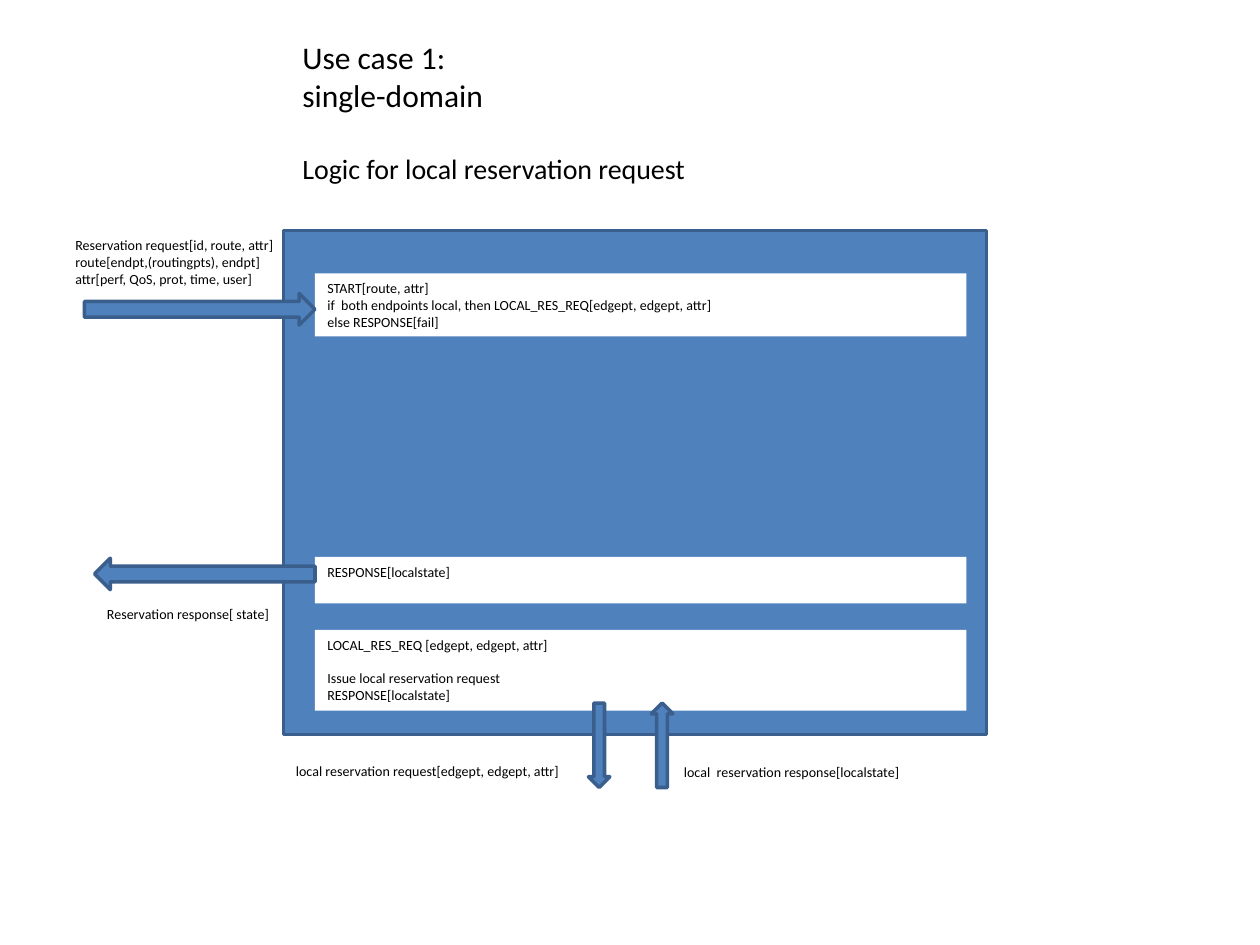
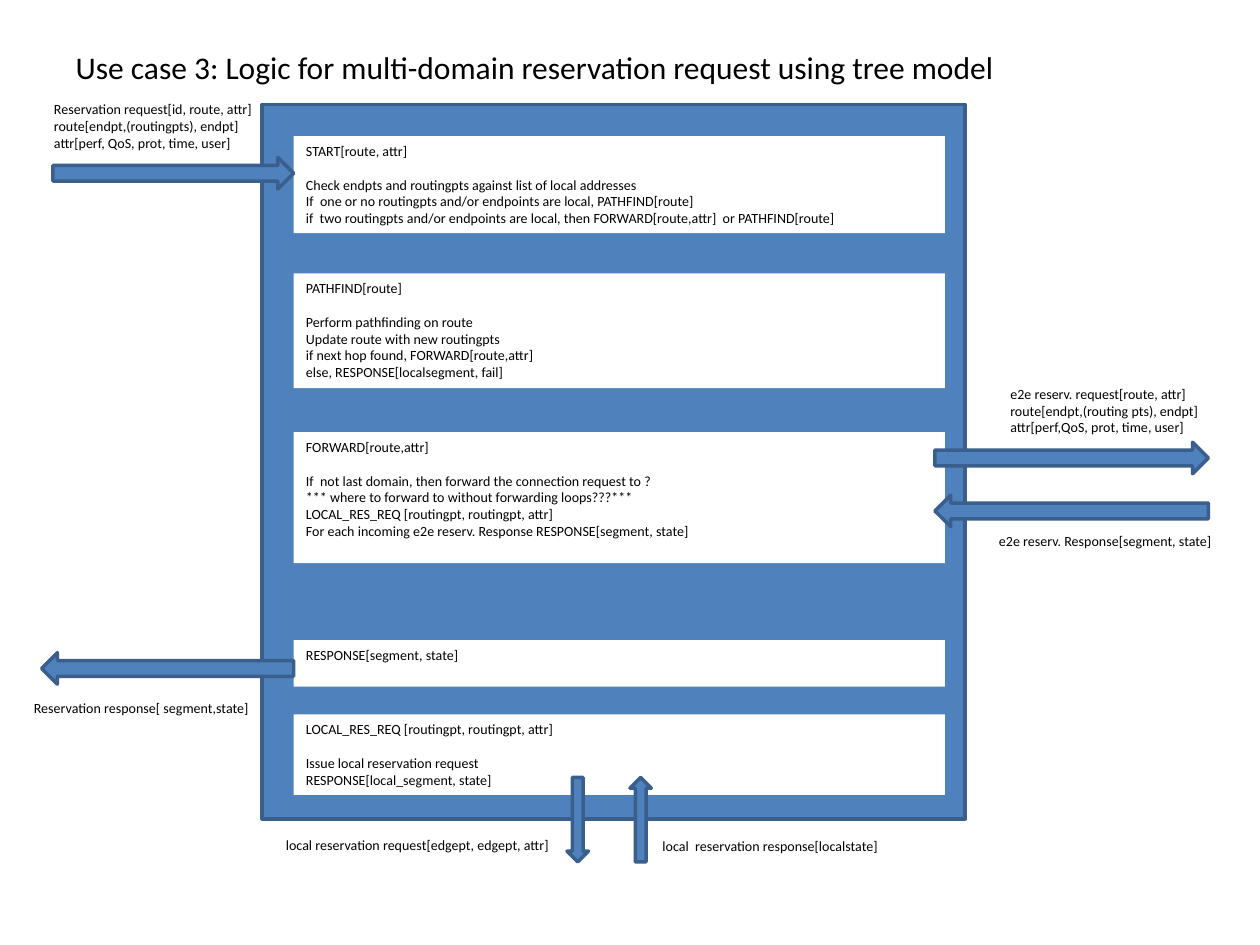
import dataclasses

import pptx
import pptx.dml.color
import pptx.enum.shapes
import pptx.enum.text
import pptx.util

Inches = pptx.util.Inches
Pt = pptx.util.Pt
Color = pptx.dml.color.RGBColor.from_string
Preset = pptx.enum.shapes.MSO_SHAPE
Align = pptx.enum.text.PP_ALIGN
Anchor = pptx.enum.text.MSO_ANCHOR
AutoSize = pptx.enum.text.MSO_AUTO_SIZE


@dataclasses.dataclass(frozen=True)
class Theme:
    font: str = "Calibri"
    ink: str = "000000"
    paper: str = "FFFFFF"
    accent: str = "4F81BD"
    outline: str = "3A5F8C"
    outline_width: float = 2
    title_size: float = 18
    subtitle_size: float = 16
    body_size: float = 8
    line_height: float = 1.22


THEME = Theme()
PANEL_WIDTH = 5.58
BOX_INDENT = 0.25
BOX_WIDTH = 5.17
ARROW_THICKNESS = 0.25
LABEL_HEIGHT = 0.24
REQUEST_LABEL = [
    "Reservation request[id, route, attr]",
    "route[endpt,(routingpts), endpt]",
    "attr[perf, QoS, prot, time, user]",
]


def write_lines(shape, lines, size=THEME.body_size, wrap=True):
    """Writes one paragraph per line; an empty line becomes space above the next."""
    frame = shape.text_frame
    frame.auto_size = AutoSize.NONE
    frame.word_wrap = wrap
    frame.vertical_anchor = Anchor.TOP
    gap = 0
    para = None
    for line in lines:
        if not line:
            gap = size * THEME.line_height
            continue
        para = frame.paragraphs[0] if para is None else frame.add_paragraph()
        para.text = line
        para.alignment = Align.LEFT
        para.space_before = Pt(gap)
        para.font.name = THEME.font
        para.font.size = Pt(size)
        para.font.color.rgb = Color(THEME.ink)
        gap = 0
    return para


def add_title(page, left, top, width, height, lines, wrap=True):
    title = page.shapes.title
    title.left, title.top = Inches(left), Inches(top)
    title.width, title.height = Inches(width), Inches(height)
    return write_lines(title, lines, THEME.title_size, wrap)


def add_label(page, left, top, width, lines, height=LABEL_HEIGHT):
    label = page.shapes.add_textbox(
        Inches(left), Inches(top), Inches(width), Inches(height))
    write_lines(label, lines)


def add_filled(page, preset, left, top, width, height, fill):
    shape = page.shapes.add_shape(
        preset, Inches(left), Inches(top), Inches(width), Inches(height))
    shape.shadow.inherit = False
    shape.fill.solid()
    shape.fill.fore_color.rgb = Color(fill)
    return shape


def add_outlined(page, preset, left, top, width, height):
    shape = add_filled(page, preset, left, top, width, height, THEME.accent)
    shape.line.color.rgb = Color(THEME.outline)
    shape.line.width = Pt(THEME.outline_width)
    return shape


def add_panel(page, left, top, height):
    add_outlined(page, Preset.RECTANGLE, left, top, PANEL_WIDTH, height)


def add_arrow(page, left, top, length, rotation=0, thickness=ARROW_THICKNESS):
    arrow = add_outlined(page, Preset.RIGHT_ARROW, left, top, length, thickness)
    arrow.rotation = rotation


def add_step(page, panel_left, top, height, lines):
    step = add_filled(page, Preset.RECTANGLE, panel_left + BOX_INDENT, top,
                      BOX_WIDTH, height, THEME.paper)
    step.line.fill.background()
    write_lines(step, lines)


def add_incoming_request(page, label_left, label_top, arrow_left, panel_left):
    add_label(page, label_left, label_top, 1.83, REQUEST_LABEL, 0.5)
    add_arrow(page, arrow_left, label_top + 0.5,
              panel_left + BOX_INDENT - arrow_left)


def add_outgoing_response(page, arrow_left, arrow_top, panel_left):
    add_arrow(page, arrow_left, arrow_top,
              panel_left + BOX_INDENT - arrow_left, 180)


def add_local_exchange(page, panel_left, arrow_top, request_left):
    for offset, rotation in ((2.17, 90), (2.67, 270)):
        add_arrow(page, panel_left + offset, arrow_top, 0.67, rotation, 0.17)
    label_top = arrow_top + 0.17
    add_label(page, request_left, label_top, 2.42,
              ["local reservation request[edgept, edgept, attr]"])
    add_label(page, panel_left + 3.08, label_top + 0.01, 2.33,
              ["local  reservation response[localstate]"])


def build_single_domain(page):
    panel_left = 2.25
    subtitle = add_title(
        page, 2.3, 0.25, 3.28, 1.28,
        ["Use case 1:", "single-domain", "", "Logic for local reservation request"],
        wrap=False)
    subtitle.font.size = Pt(THEME.subtitle_size)
    add_panel(page, panel_left, 1.83, 4)
    steps = [
        (2.17, 0.5, [
            "START[route, attr]",
            "if  both endpoints local, then LOCAL_RES_REQ[edgept, edgept, attr]",
            "else RESPONSE[fail]"]),
        (4.42, 0.37, ["RESPONSE[localstate]"]),
        (5, 0.64, [
            "LOCAL_RES_REQ [edgept, edgept, attr]", "",
            "Issue local reservation request",
            "RESPONSE[localstate]"]),
    ]
    for top, height, lines in steps:
        add_step(page, panel_left, top, height, lines)
    add_incoming_request(page, 0.5, 1.83, 0.67, panel_left)
    add_outgoing_response(page, 0.75, 4.43, panel_left)
    add_label(page, 0.75, 4.76, 1.58, ["Reservation response[ state]"])
    add_local_exchange(page, panel_left, 5.83, 2.25)


def build_multi_domain(page):
    panel_left = 2.08
    add_title(page, 0.5, 0.33, 8.67, 0.4, [
        "Use case 3: Logic for multi-domain reservation request using tree model"])
    add_panel(page, panel_left, 0.83, 5.67)
    steps = [
        (1.08, 0.77, [
            "START[route, attr]", "",
            "Check endpts and routingpts against list of local addresses",
            "If  one or no routingpts and/or endpoints are local, PATHFIND[route]",
            "if  two routingpts and/or endpoints are local, "
            "then FORWARD[route,attr]  or PATHFIND[route]"]),
        (2.17, 0.91, [
            "PATHFIND[route]", "",
            "Perform pathfinding on route",
            "Update route with new routingpts",
            "if next hop found, FORWARD[route,attr]",
            "else, RESPONSE[localsegment, fail]"]),
        (3.43, 1.04, [
            "FORWARD[route,attr]", "",
            "If  not last domain, then forward the connection request to ?",
            "*** where to forward to without forwarding loops???***",
            "LOCAL_RES_REQ [routingpt, routingpt, attr]",
            "For each incoming e2e reserv. Response RESPONSE[segment, state]"]),
        (5.08, 0.37, ["RESPONSE[segment, state]"]),
        (5.67, 0.64, [
            "LOCAL_RES_REQ [routingpt, routingpt, attr]", "",
            "Issue local reservation request",
            "RESPONSE[local_segment, state]"]),
    ]
    for top, height, lines in steps:
        add_step(page, panel_left, top, height, lines)
    add_incoming_request(page, 0.33, 0.75, 0.42, panel_left)
    add_outgoing_response(page, 0.33, 5.18, panel_left)
    add_label(page, 0.17, 5.5, 1.92, ["Reservation response[ segment,state]"])
    add_local_exchange(page, panel_left, 6.42, 2.17)
    add_label(page, 7.92, 3.01, 1.75, [
        "e2e reserv. request[route, attr]",
        "route[endpt,(routing pts), endpt]",
        "attr[perf,QoS, prot, time, user]"], 0.5)
    add_arrow(page, 7.42, 3.51, 2.17)
    add_arrow(page, 7.42, 3.93, 2.17, 180)
    add_label(page, 7.83, 4.18, 1.92, ["e2e reserv. Response[segment, state]"])


def main():
    deck = pptx.Presentation()
    deck.slide_width, deck.slide_height = Inches(10), Inches(7.5)
    title_only = deck.slide_layouts.get_by_name("Title Only")
    for build in (build_single_domain, build_multi_domain):
        build(deck.slides.add_slide(title_only))
    deck.save("out.pptx")


if __name__ == "__main__":
    main()
